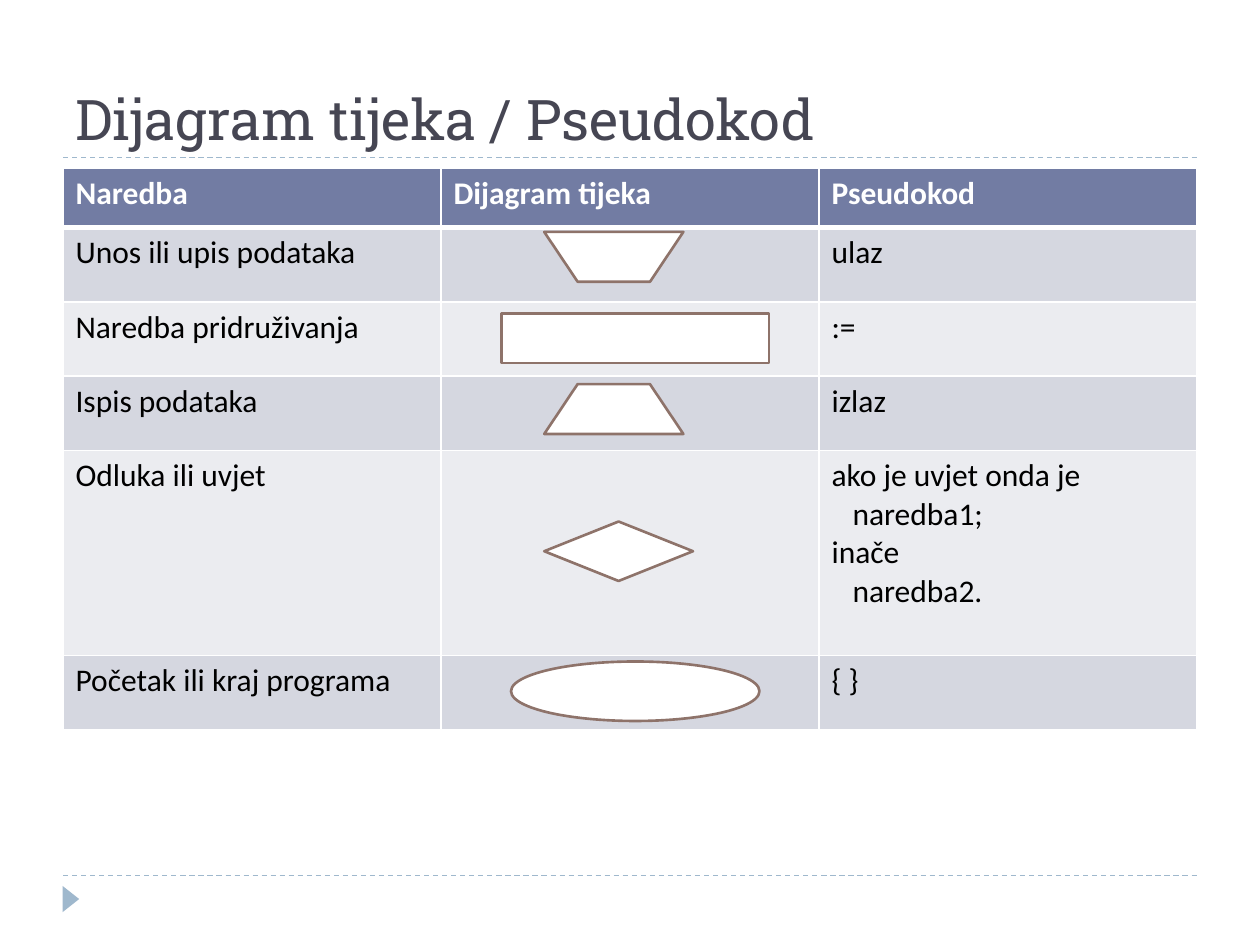
from lxml.etree import SubElement
from pptx import Presentation
from pptx.dml.color import RGBColor as Rgb
from pptx.enum.dml import MSO_LINE as Dash
from pptx.enum.shapes import MSO_CONNECTOR as Connector, MSO_SHAPE as Shape
from pptx.enum.text import MSO_ANCHOR as Anchor
from pptx.oxml.ns import qn
from pptx.util import Pt

COLORS = {
    "title": "464653", "accent": "9FB8CD", "header": "727CA3",
    "odd": "D5D7E0", "even": "EBECF0", "outline": "8E736A",
    "white": "FFFFFF", "black": "000000",
}
TITLE = {"name": "Roboto Slab", "size": Pt(32), "bold": False}
HEADER = {"name": "Calibri", "size": Pt(18), "bold": True}
BODY = {"name": "Calibri", "size": Pt(18), "bold": False}


def write(para, text, style, color):
    span = para.add_run()
    span.text = text
    for key, value in style.items():
        setattr(span.font, key, value)
    span.font.color.rgb = Rgb.from_string(COLORS[color])


def add_border(cell, side, width):
    line = SubElement(cell._tc.get_or_add_tcPr(), qn(f"a:ln{side}"), w=str(Pt(width)))
    fill = SubElement(line, qn("a:solidFill"))
    SubElement(fill, qn("a:srgbClr"), val=COLORS["white"])


deck = Presentation()
deck.slide_width, deck.slide_height = Pt(720), Pt(540)
page = deck.slides.add_slide(deck.slide_layouts[6])

# Dashed rules above the footer and under the title
for y in (500.4, 90):
    rule = page.shapes.add_connector(Connector.STRAIGHT, Pt(36), Pt(y), Pt(684), Pt(y))
    rule.line.color.rgb = Rgb.from_string(COLORS["accent"])
    rule.line.width = Pt(0.75)
    rule.line.dash_style = Dash.DASH
    SubElement(rule._element.spPr, qn("a:effectLst"))

# Footer marker
marker = page.shapes.add_shape(Shape.ISOSCELES_TRIANGLE, Pt(33), Pt(509), Pt(15), Pt(9.5))
marker.rotation = 90
marker.shadow.inherit = False
marker.fill.solid()
marker.fill.fore_color.rgb = Rgb.from_string(COLORS["accent"])
marker.line.fill.background()

# Title
box = page.shapes.add_textbox(Pt(36), Pt(12), Pt(648), Pt(78))
box.text_frame.word_wrap = True
box.text_frame.vertical_anchor = Anchor.BOTTOM
write(box.text_frame.paragraphs[0], "Dijagram tijeka / Pseudokod", TITLE, "title")

# Table: each cell is a list of (text, indent) lines
rows = [
    ("Naredba", "Dijagram tijeka", [("Pseudokod", 0)]),
    ("Unos ili upis podataka", "", [("ulaz", 0)]),
    ("Naredba pridruživanja", "", [(":=", 0)]),
    ("Ispis podataka", "", [("izlaz", 0)]),
    ("Odluka ili uvjet", "", [("ako je uvjet onda je", 0), ("naredba1;", 12),
                              ("inače", 0), ("naredba2.", 12)]),
    ("Početak ili kraj programa", "", [("{ }", 0)]),
]
heights = [34, 42.5, 42.5, 42.5, 117, 42.5]
table = page.shapes.add_table(len(rows), 3, Pt(36), Pt(96), Pt(648), Pt(sum(heights))).table
for column in table.columns:
    column.width = Pt(216)
for r, (command, diagram, code) in enumerate(rows):
    table.rows[r].height = Pt(heights[r])
    style, ink = (BODY, "black") if r else (HEADER, "white")
    fill = "header" if r == 0 else "odd" if r % 2 else "even"
    for c, lines in enumerate(([(command, 0)], [(diagram, 0)], code)):
        cell = table.cell(r, c)
        for side in "LRTB":
            thick = (r, side) in ((0, "B"), (1, "T"))
            add_border(cell, side, 3 if thick else 1)
        cell.fill.solid()
        cell.fill.fore_color.rgb = Rgb.from_string(COLORS[fill])
        for i, (text, indent) in enumerate(lines):
            frame = cell.text_frame
            para = frame.add_paragraph() if i else frame.paragraphs[0]
            if indent:
                para._p.get_or_add_pPr().set("marL", str(Pt(indent)))
            if text:
                write(para, text, style, ink)

# Flowchart symbols: kind, left, top, width, height, rotation
symbols = [
    (Shape.TRAPEZOID, 311, 132.5, 79.5, 28.5, 180),
    (Shape.RECTANGLE, 286.5, 179, 153, 28.5, 0),
    (Shape.TRAPEZOID, 311, 219.5, 79.5, 28.5, 0),
    (Shape.DIAMOND, 311, 298, 85, 34, 0),
    (Shape.OVAL, 292, 378, 142, 34, 0),
]
for kind, left, top, width, height, rotation in symbols:
    symbol = page.shapes.add_shape(kind, Pt(left), Pt(top), Pt(width), Pt(height))
    symbol.rotation = rotation
    symbol.shadow.inherit = False
    if kind == Shape.TRAPEZOID:
        symbol.adjustments[0] = 0.67
    symbol.fill.solid()
    symbol.fill.fore_color.rgb = Rgb.from_string(COLORS["white"])
    symbol.line.color.rgb = Rgb.from_string(COLORS["outline"])
    symbol.line.width = Pt(1.5)

deck.save("out.pptx")
